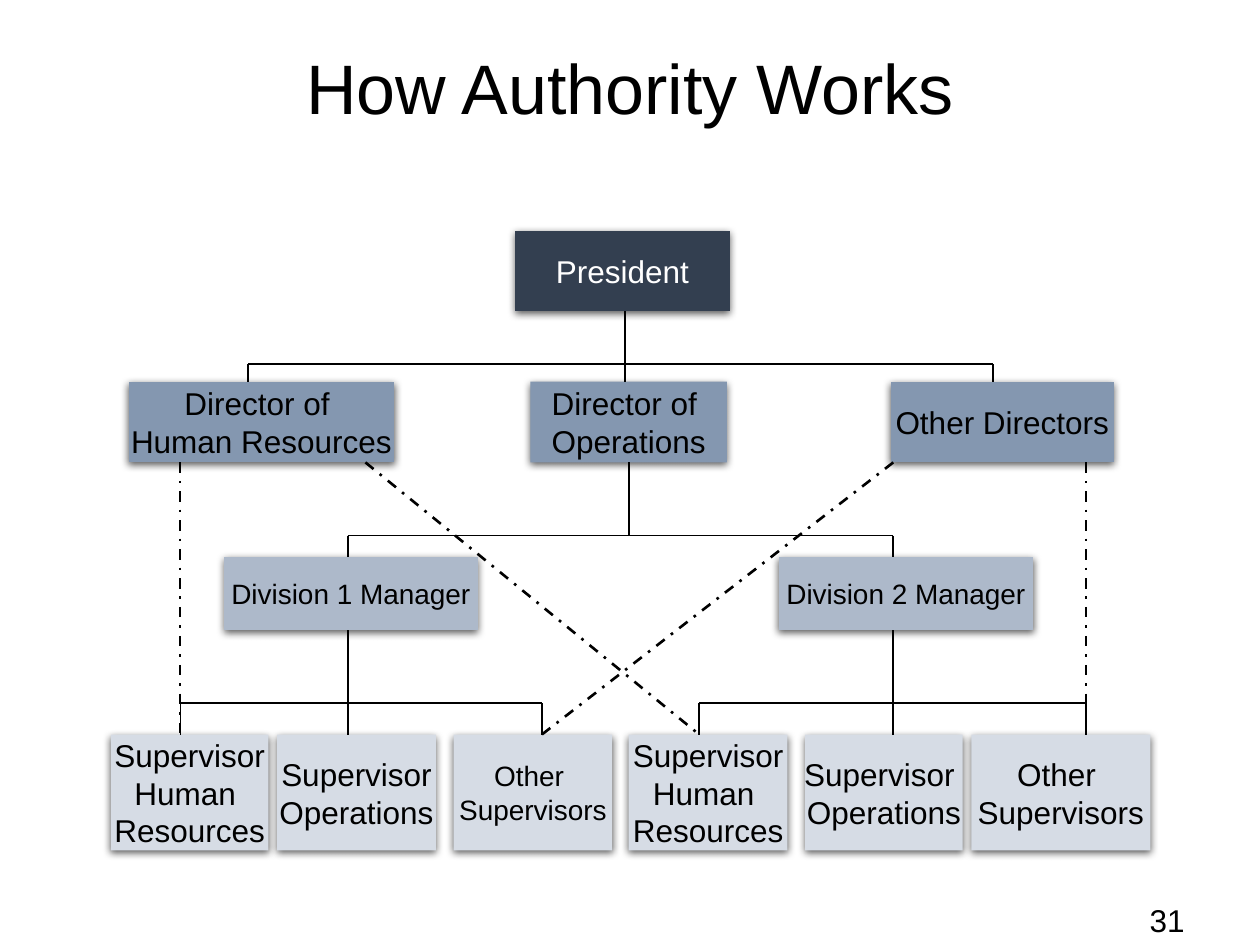
from lxml import etree
from pptx import Presentation
from pptx import util as u
from pptx.dml.color import RGBColor
from pptx.enum import dml, shapes, text
from pptx.oxml import parse_xml
from pptx.oxml.ns import nsdecls, qn

PROCESS = shapes.MSO_SHAPE.FLOWCHART_PROCESS
RECTANGLE = shapes.MSO_SHAPE.RECTANGLE
NAVY, STEEL, MIST, PALE = "333F50", "8497B0", "ADB9CA", "D6DCE5"
BLACK, WHITE = "000000", "FFFFFF"

SHADOW = (
    f'<a:effectLst {nsdecls("a")}>'
    f'<a:outerShdw blurRad="{u.Pt(4.5)}" dist="{u.Pt(1.5)}" dir="5400000" rotWithShape="0">'
    '<a:srgbClr val="000000"><a:alpha val="63000"/></a:srgbClr>'
    "</a:outerShdw></a:effectLst>"
)


def color(hex_code):
    return RGBColor.from_string(hex_code)


class OrgChart:
    font = "Arial"

    def __init__(self, slide):
        self.slide = slide

    def set_text(self, frame, lines, size, ink, align):
        frame.text = "\n".join(lines)
        frame.vertical_anchor = text.MSO_ANCHOR.MIDDLE
        for paragraph in frame.paragraphs:
            paragraph.alignment = align
            paragraph.font.name = self.font
            paragraph.font.size = u.Pt(size)
            paragraph.font.color.rgb = color(ink)

    def label(self, bounds, words, size, align):
        box = self.slide.shapes.add_textbox(*map(u.Inches, bounds))
        box.text_frame.word_wrap = True
        self.set_text(box.text_frame, [words], size, BLACK, align)
        return box.text_frame

    def role(self, bounds, lines, fill, size=18, ink=BLACK, outline=RECTANGLE):
        box = self.slide.shapes.add_shape(outline, *map(u.Inches, bounds))
        box.fill.solid()
        box.fill.fore_color.rgb = color(fill)
        box.line.fill.background()
        box._element.spPr.append(parse_xml(SHADOW))
        frame = box.text_frame
        frame.word_wrap = False
        frame.margin_left = frame.margin_right = 0
        frame.margin_top = frame.margin_bottom = 0
        self.set_text(frame, lines, size, ink, text.PP_ALIGN.CENTER)
        return box

    def line(self, x1, y1, x2, y2, width=1, dashed=False):
        link = self.slide.shapes.add_connector(
            shapes.MSO_CONNECTOR.STRAIGHT, *map(u.Inches, (x1, y1, x2, y2)))
        link.line.color.rgb = color(BLACK)
        link.line.width = u.Pt(width)
        if dashed:
            link.line.dash_style = dml.MSO_LINE.DASH_DOT
        etree.SubElement(link._element.spPr, qn("a:effectLst"))
        return link

    def branch(self, bar_y, child_y, left, right, drop_widths=(1, 1)):
        self.line(left, bar_y, right, bar_y)
        for x, width in zip((left, right), drop_widths):
            self.line(x, bar_y, x, child_y, width)


def main():
    deck = Presentation()
    deck.slide_width, deck.slide_height = u.Inches(10), u.Inches(7.5)
    chart = OrgChart(deck.slides.add_slide(deck.slide_layouts[6]))

    title = chart.label((0.5, 0, 9, 1.45), "How Authority Works", 40, text.PP_ALIGN.CENTER)
    title.paragraphs[0].line_spacing = 0.9
    chart.label((8.25, 7.1, 1.25, 0.4), "31", 18, text.PP_ALIGN.RIGHT)

    director_y, director_base = 3.03, 3.67
    manager_y, manager_base = 4.42, 5
    supervisor_y = 5.83

    chart.role((4.09, 1.83, 1.7, 0.64), ["President"], NAVY, ink=WHITE, outline=PROCESS)

    operations = chart.role((4.21, director_y, 1.56, 0.64),
                            ["Director of ", "Operations"], STEEL)
    for left, width, lines in (
        (1.02, 2.11, ["Director of ", "Human Resources"]),
        (7.07, 1.77, ["Other Directors"]),
    ):
        chart.role((left, director_y, width, 0.64), lines, STEEL, outline=PROCESS)

    for number, left, width in ((1, 1.78, 2.01), (2, 6.18, 2.02)):
        chart.role((left, manager_y, width, 0.58), [f"Division {number} Manager"],
                   MIST, size=16, outline=PROCESS)

    human_resources = ["Supervisor", "Human ", "Resources"]
    others = ["Other ", "Supervisors"]
    for left, width, lines, size in (
        (0.88, 1.25, human_resources, 18),
        (2.2, 1.26, ["Supervisor", "Operations"], 18),
        (3.6, 1.26, others, 16),
        (4.99, 1.26, human_resources, 18),
        (6.39, 1.25, ["Supervisor ", "Operations"], 18),
        (7.71, 1.42, others, 18),
    ):
        chart.role((left, supervisor_y, width, 0.92), lines, PALE, size)

    division_1, division_2 = 2.76, 7.09
    first_hr, first_other, second_hr, second_other = 1.43, 4.3, 5.55, 8.62

    chart.line(4.96, 2.47, 4.96, director_y)
    chart.branch(2.89, director_y, 1.97, 7.88)
    chart.line(4.99, director_base, 4.99, 4.25).begin_connect(operations, 2)
    chart.branch(4.25, manager_y, division_1, division_2)
    for x in (division_1, division_2):
        chart.line(x, manager_base, x, supervisor_y)
    chart.branch(5.58, supervisor_y, first_hr, first_other, (0.75, 1))
    chart.branch(5.58, supervisor_y, second_hr, second_other, (1, 0.75))

    for start, end in (
        (first_hr, first_hr),
        (2.9, second_hr),
        (division_2, first_other),
        (second_other, second_other),
    ):
        chart.line(start, director_base, end, supervisor_y, 1.5, dashed=True)

    deck.save("out.pptx")


if __name__ == "__main__":
    main()
